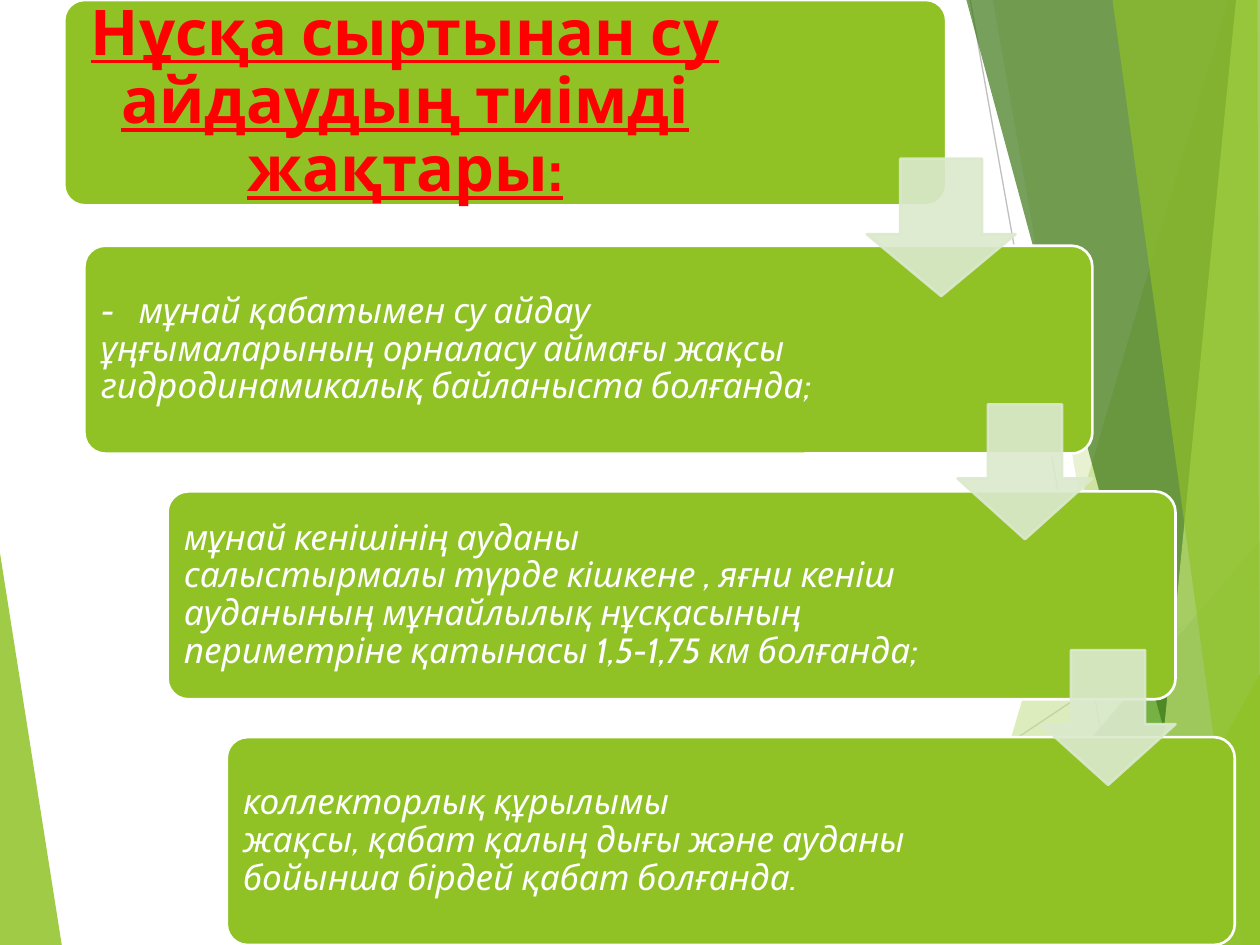
from lxml import etree
from pptx import Presentation
from pptx import util as u
from pptx.dml.color import RGBColor
from pptx.enum import shapes, text
from pptx.oxml import ns

# The slide is a grid of 100 columns by 75 rows.
CELL = u.Inches(0.1)
COLUMNS, ROWS = 100, 75

GREEN = RGBColor(0x90, 0xC2, 0x26)
MID_GREEN = RGBColor(0x54, 0xA0, 0x21)
DARK_GREEN = RGBColor(0x3F, 0x78, 0x19)
LIME = RGBColor(0xC0, 0xE4, 0x74)
PALE_GREEN = RGBColor(0xDB, 0xE9, 0xCD)
LIGHT_GREY = RGBColor(0xD9, 0xD9, 0xD9)
GREY = RGBColor(0xBF, 0xBF, 0xBF)
RED = RGBColor(0xFF, 0x00, 0x00)
WHITE = RGBColor(0xFF, 0xFF, 0xFF)

FONT = "Cabin"
PITCH = 19.5
PANEL_WIDTH, PANEL_HEIGHT = 80, 16.5
MARGIN = 0.5

RAYS = [((56.1, ROWS), (COLUMNS, 45.7), LIGHT_GREY), ((77, 0), (90.4, ROWS), GREY)]

# Corner points, colour and opacity in percent, from back to front.
FACETS = [
    ([(0, 43.9), (4.9, ROWS), (0, ROWS)], GREEN, 85),
    ([(97.5, 0), (75.4, ROWS), (COLUMNS, ROWS), (COLUMNS, 0)], GREEN, 30),
    ([(78.8, 0), (91.9, ROWS), (COLUMNS, ROWS), (COLUMNS, 0)], GREEN, 20),
    ([(72.6, ROWS), (COLUMNS, 42.9), (COLUMNS, ROWS)], MID_GREEN, 72),
    ([(76.7, 0), (97, ROWS), (COLUMNS, ROWS), (COLUMNS, 0)], DARK_GREEN, 70),
    ([(98.1, 0), (90.7, ROWS), (COLUMNS, ROWS), (COLUMNS, 0)], LIME, 70),
    ([(88.3, 0), (98.6, ROWS), (COLUMNS, ROWS), (99.8, 0)], GREEN, 65),
    ([(88.1, ROWS), (COLUMNS, 53.5), (COLUMNS, ROWS)], GREEN, 80),
]

TITLE = "Нұсқа сыртынан су айдаудың тиімді жақтары:"
# Left column of each panel and its text, broken where a line must end.
STEPS = [
    (6.7, ["-\tмұнай қабатымен су айдау ұңғымаларының орналасу аймағы жақсы "
           "гидродинамикалық байланыста болғанда;"]),
    (13.3, ["мұнай кенішінің ауданы",
            "салыстырмалы түрде кішкене , яғни кеніш ауданының мұнайлылық "
            "нұсқасының периметріне қатынасы 1,5-1,75 км болғанда;"]),
    (18, ["коллекторлық құрылымы",
          "жақсы, қабат қалың дығы және ауданы бойынша бірдей қабат болғанда."]),
]
ARROWS = [(68.8, 12.6, 11.8, 10.9), (76, 32.1, 10.7, 10.7), (82.6, 51.6, 10.7, 10.7)]


def cells(*counts):
    return [round(count * CELL) for count in counts]


def set_opacity(shape, percent):
    for color in shape._element.spPr.iter(ns.qn("a:srgbClr")):
        etree.SubElement(color, ns.qn("a:alpha")).set("val", str(percent * 1000))


def add_ray(page, start, end, color):
    ray = page.shapes.add_connector(
        shapes.MSO_CONNECTOR.STRAIGHT, *cells(*start, *end))
    ray.line.color.rgb = color
    ray.line.width = u.Pt(0.75)
    etree.SubElement(ray._element.spPr, ns.qn("a:effectLst"))


def add_facet(page, corners, color, opacity):
    first, *others = [cells(*corner) for corner in corners]
    builder = page.shapes.build_freeform(*first)
    builder.add_line_segments(others, close=True)
    facet = builder.convert_to_shape()
    facet.shadow.inherit = False
    facet.fill.solid()
    facet.fill.fore_color.rgb = color
    facet.line.fill.background()
    set_opacity(facet, opacity)


def add_preset(page, kind, place, adjustments, fill, line):
    shape = page.shapes.add_shape(kind, *cells(*place))
    shape.shadow.inherit = False
    for index, value in enumerate(adjustments):
        shape.adjustments[index] = value
    shape.fill.solid()
    shape.fill.fore_color.rgb = fill
    shape.line.color.rgb = line
    shape.line.width = u.Pt(1.5)
    return shape


def add_panel(page, place):
    add_preset(page, shapes.MSO_SHAPE.ROUNDED_RECTANGLE, place, [0.1], GREEN, WHITE)


def add_arrow(page, place):
    arrow = add_preset(page, shapes.MSO_SHAPE.DOWN_ARROW, place, [0.55, 0.45],
                       PALE_GREEN, PALE_GREEN)
    set_opacity(arrow, 90)


def add_text(page, place, inset, lines, size, color, align, title=False):
    box = page.shapes.add_textbox(*cells(*place))
    frame = box.text_frame
    frame.word_wrap = True
    frame.vertical_anchor = text.MSO_ANCHOR.MIDDLE
    frame.margin_left = frame.margin_right = u.Inches(inset)
    frame.margin_top = frame.margin_bottom = u.Inches(inset)
    para = frame.paragraphs[0]
    para.alignment = align
    para.line_spacing = 0.9
    for number, line in enumerate(lines):
        if number:
            para.add_line_break()
        span = para.add_run()
        span.text = line
        span.font.name = FONT
        span.font.size = u.Pt(size)
        span.font.color.rgb = color
        span.font.bold = span.font.underline = title
        span.font.italic = not title
    return para


def add_tab_stop(para, position):
    tabs = etree.SubElement(para._p.get_or_add_pPr(), ns.qn("a:tabLst"))
    etree.SubElement(tabs, ns.qn("a:tab"), pos=str(position), algn="l")


def main():
    deck = Presentation()
    deck.slide_width, deck.slide_height = cells(COLUMNS, ROWS)
    page = deck.slides.add_slide(deck.slide_layouts[6])

    left_facet, *right_facets = FACETS
    add_facet(page, *left_facet)
    for ray in RAYS:
        add_ray(page, *ray)
    for facet in right_facets:
        add_facet(page, *facet)

    add_panel(page, (5.1, 0, 70, 16.3))
    add_text(page, (5.6, MARGIN, 53.1, 15.4), 0.15, [TITLE], 36, RED,
             text.PP_ALIGN.CENTER, title=True)

    for number, (left, lines) in enumerate(STEPS, start=1):
        top = number * PITCH
        add_panel(page, (left, top, PANEL_WIDTH, PANEL_HEIGHT))
        place = (left + MARGIN, top + MARGIN, 61.6, PANEL_HEIGHT - 2 * MARGIN)
        para = add_text(page, place, 0.08, lines, 20, WHITE, text.PP_ALIGN.LEFT)
        if "\t" in lines[0]:
            add_tab_stop(para, u.Inches(0.3))

    for place in ARROWS:
        add_arrow(page, place)

    deck.save("out.pptx")


if __name__ == "__main__":
    main()
